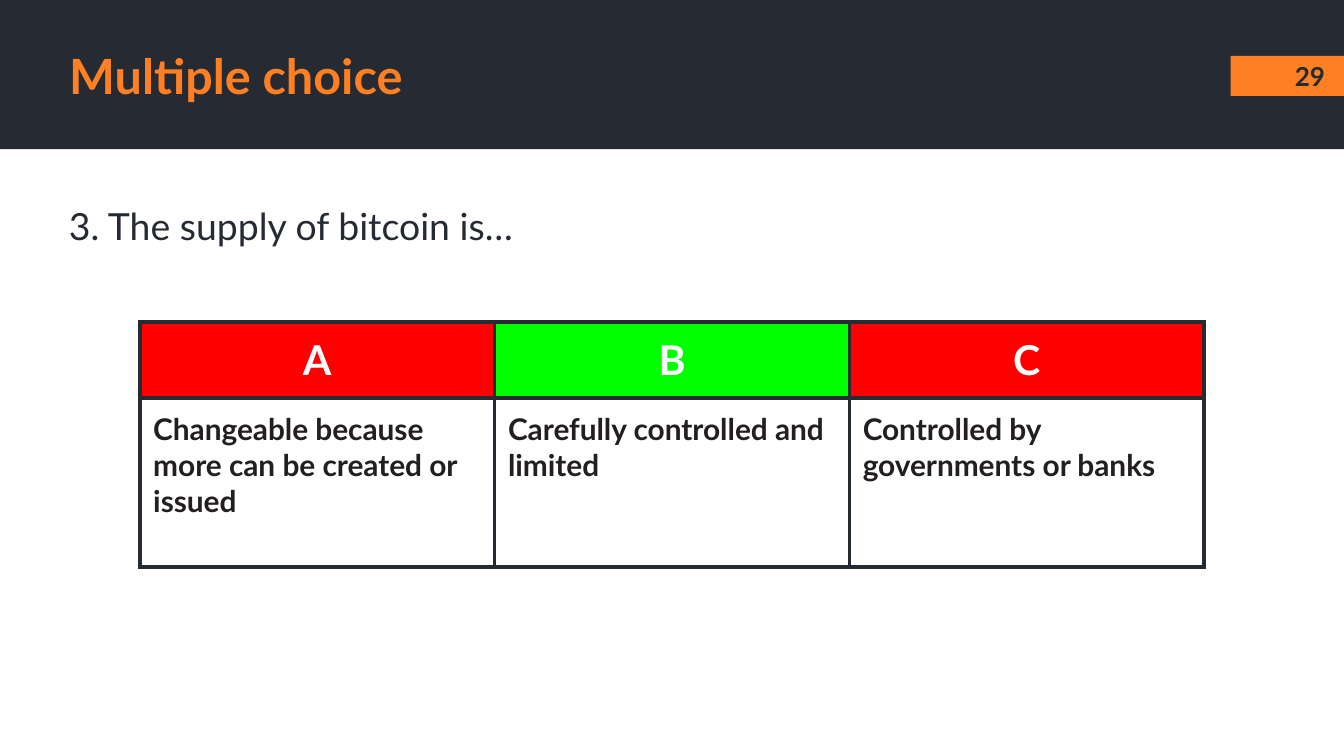
from typing import NamedTuple

from lxml.etree import SubElement
from pptx import Presentation
from pptx.dml.color import RGBColor
from pptx.enum.shapes import MSO_SHAPE as Shape
from pptx.enum.text import MSO_ANCHOR as Anchor, PP_ALIGN as Align
from pptx.oxml import parse_xml
from pptx.oxml.ns import nsdecls, qn
from pptx.util import Inches, Pt

WIDE = Inches(10)
HIGH = WIDE * 9 // 16
INSET = Inches(0.1)
FONT = "Lato"
DARK = RGBColor(0x26, 0x2A, 0x33)
ORANGE = RGBColor(0xFF, 0x80, 0x22)
WHITE = RGBColor(0xFF, 0xFF, 0xFF)
INK = RGBColor(0x23, 0x1F, 0x20)
RED = RGBColor(0xFF, 0x00, 0x00)
GREEN = RGBColor(0x00, 0xFF, 0x00)


class Box(NamedTuple):
    """A place on the slide, in percent of its width and height."""
    x: float
    y: float
    w: float
    h: float

    def place(self) -> tuple[int, int, int, int]:
        return (round(WIDE * self.x / 100), round(HIGH * self.y / 100),
                round(WIDE * self.w / 100), round(HIGH * self.h / 100))


class Style(NamedTuple):
    size: int
    color: RGBColor
    bold: bool = True
    align: Align = Align.LEFT


class Choice(NamedTuple):
    mark: str
    text: str
    fill: RGBColor


BARS = [(Box(0, 0, 100, 19.73), DARK), (Box(91.57, 7.4, 8.43, 5.3), ORANGE)]
CHOICES = [
    Choice("A", "Changeable because more can be created or issued", RED),
    Choice("B", "Carefully controlled and limited", GREEN),
    Choice("C", "Controlled by governments or banks", RED),
]
GRID = Box(10.4, 42.58, 79.2, 32.4)
HEAD_SHARE = 0.31
HEAD = Style(22, WHITE, align=Align.CENTER)
BODY = Style(16, INK)


def write(frame, text: str, style: Style) -> None:
    frame.text = text
    frame.word_wrap = True
    para = frame.paragraphs[0]
    para.alignment = style.align
    font = para.font
    font.name, font.size, font.bold = FONT, Pt(style.size), style.bold
    font.color.rgb = style.color


def pad(item) -> None:
    """Set equal margins on a text frame or a table cell."""
    item.margin_left = item.margin_right = INSET
    item.margin_top = item.margin_bottom = INSET


def add_bar(slide, box: Box, color: RGBColor) -> None:
    bar = slide.shapes.add_shape(Shape.RECTANGLE, *box.place())
    bar.shadow.inherit = False
    bar.fill.solid()
    bar.fill.fore_color.rgb = color
    bar.line.fill.background()


def set_text(shape, text: str, style: Style, anchor: Anchor) -> None:
    frame = shape.text_frame
    write(frame, text, style)
    pad(frame)
    frame.vertical_anchor = anchor


def add_text(slide, box: Box, text: str, style: Style, anchor: Anchor) -> None:
    set_text(slide.shapes.add_textbox(*box.place()), text, style, anchor)


def add_title(slide, box: Box, text: str, style: Style) -> None:
    title = slide.shapes.title
    title.left, title.top, title.width, title.height = box.place()
    set_text(title, text, style, Anchor.MIDDLE)
    # Bring the title in front of the bars.
    title.element.getparent().append(title.element)


def add_edges(cell) -> None:
    props = cell._tc.get_or_add_tcPr()
    for at, side in enumerate(("lnL", "lnR", "lnT", "lnB")):
        edge = parse_xml(f'<a:{side} {nsdecls("a")} w="{Pt(2.25)}"/>')
        fill = SubElement(edge, qn("a:solidFill"))
        SubElement(fill, qn("a:srgbClr"), val=str(DARK))
        props.insert(at, edge)


def set_cell(cell, text: str, style: Style, fill: RGBColor | None) -> None:
    write(cell.text_frame, text, style)
    pad(cell)
    if fill is None:
        cell.fill.background()
    else:
        cell.fill.solid()
        cell.fill.fore_color.rgb = fill
    add_edges(cell)


def add_grid(slide, box: Box, items: list[Choice]) -> None:
    place = box.place()
    table = slide.shapes.add_table(2, len(items), *place).table
    table.horz_banding = False
    for row, share in zip(table.rows, (HEAD_SHARE, 1 - HEAD_SHARE)):
        row.height = round(place[3] * share)
    for col, item in enumerate(items):
        set_cell(table.cell(0, col), item.mark, HEAD, item.fill)
        set_cell(table.cell(1, col), item.text, BODY, None)


def main() -> None:
    deck = Presentation()
    deck.slide_width, deck.slide_height = WIDE, HIGH
    slide = deck.slides.add_slide(deck.slide_layouts[5])
    for box, color in BARS:
        add_bar(slide, box, color)
    add_title(slide, Box(4.15, 4.97, 87.4, 9.96), "Multiple choice",
              Style(26, ORANGE))
    add_text(slide, Box(94.87, 7.82, 5.2, 4.45), "29",
             Style(14, DARK, align=Align.CENTER), Anchor.MIDDLE)
    add_grid(slide, GRID, CHOICES)
    add_text(slide, Box(4.15, 25.08, 83.8, 22.8), "3. The supply of bitcoin is…",
             Style(20, DARK, bold=False), Anchor.TOP)
    deck.save("out.pptx")


if __name__ == "__main__":
    main()
